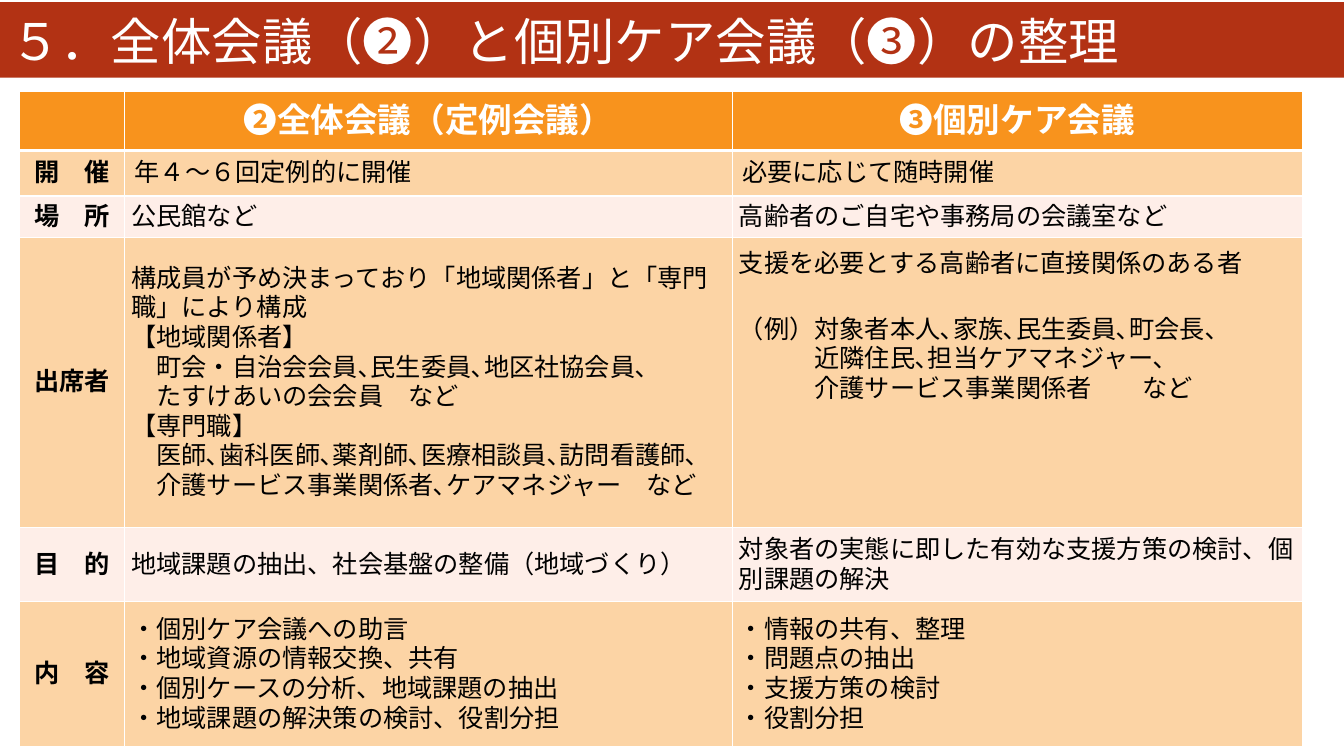
from lxml import etree
from pptx import Presentation
from pptx.dml.color import RGBColor
from pptx.enum import lang, text
from pptx.oxml import ns
from pptx.util import Pt

WHITE = RGBColor(0xFF, 0xFF, 0xFF)
BLACK = RGBColor(0, 0, 0)
BRICK = RGBColor(0xB2, 0x32, 0x14)
ORANGE = RGBColor(0xF8, 0x93, 0x1D)
PEACH = RGBColor(0xFC, 0xD4, 0xA5)
BLUSH = RGBColor(0xFE, 0xEE, 0xE8)

LEFT, CENTER = text.PP_ALIGN.LEFT, text.PP_ALIGN.CENTER
HEADER = {"size": Pt(24), "bold": True, "color": WHITE}
LABEL = {"size": Pt(18), "bold": True, "color": BLACK}
BODY = {"size": Pt(18), "bold": False, "color": BLACK}

COLUMN_WIDTHS = (75, 434, 407.5)
ROW_HEIGHTS = (42, 32.5, 29.5, 207.5, 53, 103.5)


def line(words, indent=0, first=0, bullet=None, after=0):
    """One paragraph: left indent, first-line offset, bullet and space after in points."""
    return {"words": words, "indent": indent, "first": first,
            "bullet": bullet, "after": after}


def bullets(*items):
    return [line(item, 6, -6, "・") for item in items]


ROWS = [
    ([], [line("➋全体会議（定例会議）")], [line("➌個別ケア会議")]),
    ([line("開　催")], [line("年４～６回定例的に開催")], [line("必要に応じて随時開催")]),
    ([line("場　所")], [line("公民館など")], [line("高齢者のご自宅や事務局の会議室など")]),
    ([line("出席者")],
     [line("構成員が予め決まっており「地域関係者」と「専門職」により構成"),
      line("【地域関係者】"),
      line("町会・自治会会員､民生委員､地区社協会員､", 18),
      line("たすけあいの会会員　など", 18),
      line("【専門職】"),
      line("医師､歯科医師､薬剤師､医療相談員､訪問看護師､", 18),
      line("介護サービス事業関係者､ケアマネジャー　など", 18)],
     [line("支援を必要とする高齢者に直接関係のある者", after=26),
      line("（例）対象者本人､家族､民生委員､町会長､\v近隣住民､担当ケアマネジャー､\v"
           "介護サービス事業関係者　　など", 54, -54)]),
    ([line("目　的")], [line("地域課題の抽出、社会基盤の整備（地域づくり）")],
     [line("対象者の実態に即した有効な支援方策の検討、個別課題の解決")]),
    ([line("内　容")],
     bullets("個別ケア会議への助言", "地域資源の情報交換、共有",
             "個別ケースの分析、地域課題の抽出", "地域課題の解決策の検討、役割分担"),
     bullets("情報の共有、整理", "問題点の抽出", "支援方策の検討", "役割分担")),
]


class SlideBuilder:
    def __init__(self, slide, font):
        self.slide = slide
        self.font = font

    def format_text(self, paragraph, style):
        for run in paragraph.runs:
            values = {"name": self.font, "size": style["size"], "bold": style["bold"],
                      "language_id": lang.MSO_LANGUAGE_ID.JAPANESE}
            for name, value in values.items():
                setattr(run.font, name, value)
            run.font.color.rgb = style["color"]
            east_asian = etree.Element(ns.qn("a:ea"), typeface=self.font)
            run.font._element.find(ns.qn("a:latin")).addnext(east_asian)

    def title(self, words, left, top, width, height):
        title = self.slide.shapes.title
        box = {"left": left, "top": top, "width": width, "height": height}
        for name, value in box.items():
            setattr(title, name, Pt(value))
        title.fill.solid()
        title.fill.fore_color.rgb = BRICK
        frame = title.text_frame
        frame.text = words
        frame.auto_size = text.MSO_AUTO_SIZE.NONE
        frame.vertical_anchor = text.MSO_ANCHOR.MIDDLE
        heading = frame.paragraphs[0]
        heading.alignment = LEFT
        heading.line_spacing = Pt(43.2)
        self.format_text(heading, {"size": Pt(36), "bold": False, "color": WHITE})

    def table(self, rows, left, top):
        table = self.slide.shapes.add_table(
            len(rows), len(COLUMN_WIDTHS), Pt(left), Pt(top),
            Pt(sum(COLUMN_WIDTHS)), Pt(sum(ROW_HEIGHTS))).table
        for column, width in zip(table.columns, COLUMN_WIDTHS):
            column.width = Pt(width)
        for r, (row, height) in enumerate(zip(rows, ROW_HEIGHTS)):
            table.rows[r].height = Pt(height)
            for c, lines in enumerate(row):
                self.cell(table.cell(r, c), lines, r, c)
        attendees = table.cell(3, 2)
        attendees.vertical_anchor = text.MSO_ANCHOR.TOP
        attendees.margin_top = Pt(8.5)

    def cell(self, cell, lines, r, c):
        side, edge = (7.2, 3.6) if r < 2 else (4.9, 0)
        values = {"margin_left": Pt(side), "margin_right": Pt(side),
                  "margin_top": Pt(edge), "margin_bottom": Pt(edge),
                  "vertical_anchor": text.MSO_ANCHOR.MIDDLE}
        for name, value in values.items():
            setattr(cell, name, value)
        self.borders(cell, r)
        cell.fill.solid()
        cell.fill.fore_color.rgb = ORANGE if r == 0 else PEACH if r % 2 else BLUSH
        style = HEADER if r == 0 else LABEL if c == 0 else BODY
        for i, part in enumerate(lines):
            frame = cell.text_frame
            paragraph = frame.add_paragraph() if i else frame.paragraphs[0]
            self.paragraph(paragraph, part, style)

    def paragraph(self, paragraph, part, style):
        paragraph.text = part["words"]
        paragraph.alignment = LEFT if style is BODY else CENTER
        paragraph.space_after = Pt(part["after"])
        properties = paragraph._p.get_or_add_pPr()
        properties.set("marL", str(Pt(part["indent"])))
        properties.set("indent", str(Pt(part["first"])))
        if part["bullet"]:
            etree.SubElement(properties, ns.qn("a:buFont"), typeface=self.font)
            etree.SubElement(properties, ns.qn("a:buChar"), char=part["bullet"])
        self.format_text(paragraph, style)

    def borders(self, cell, r):
        """White 1 pt grid with a 3 pt rule below the header."""
        widths = {"L": 1, "R": 1, "T": 3 if r == 1 else 1, "B": 3 if r == 0 else 1}
        properties = cell._tc.get_or_add_tcPr()
        for side, width in widths.items():
            border = etree.SubElement(properties, ns.qn(f"a:ln{side}"), w=str(Pt(width)))
            fill = etree.SubElement(border, ns.qn("a:solidFill"))
            etree.SubElement(fill, ns.qn("a:srgbClr"), val=str(WHITE))


def main():
    presentation = Presentation()
    presentation.slide_width, presentation.slide_height = Pt(960), Pt(540)
    title_only = presentation.slide_layouts[5]
    builder = SlideBuilder(presentation.slides.add_slide(title_only), "Karla")
    builder.table(ROWS, 14, 65.5)
    builder.title("５．全体会議（➋）と個別ケア会議（➌）の整理", 0, 1.5, 960, 54)
    presentation.save("out.pptx")


if __name__ == "__main__":
    main()
